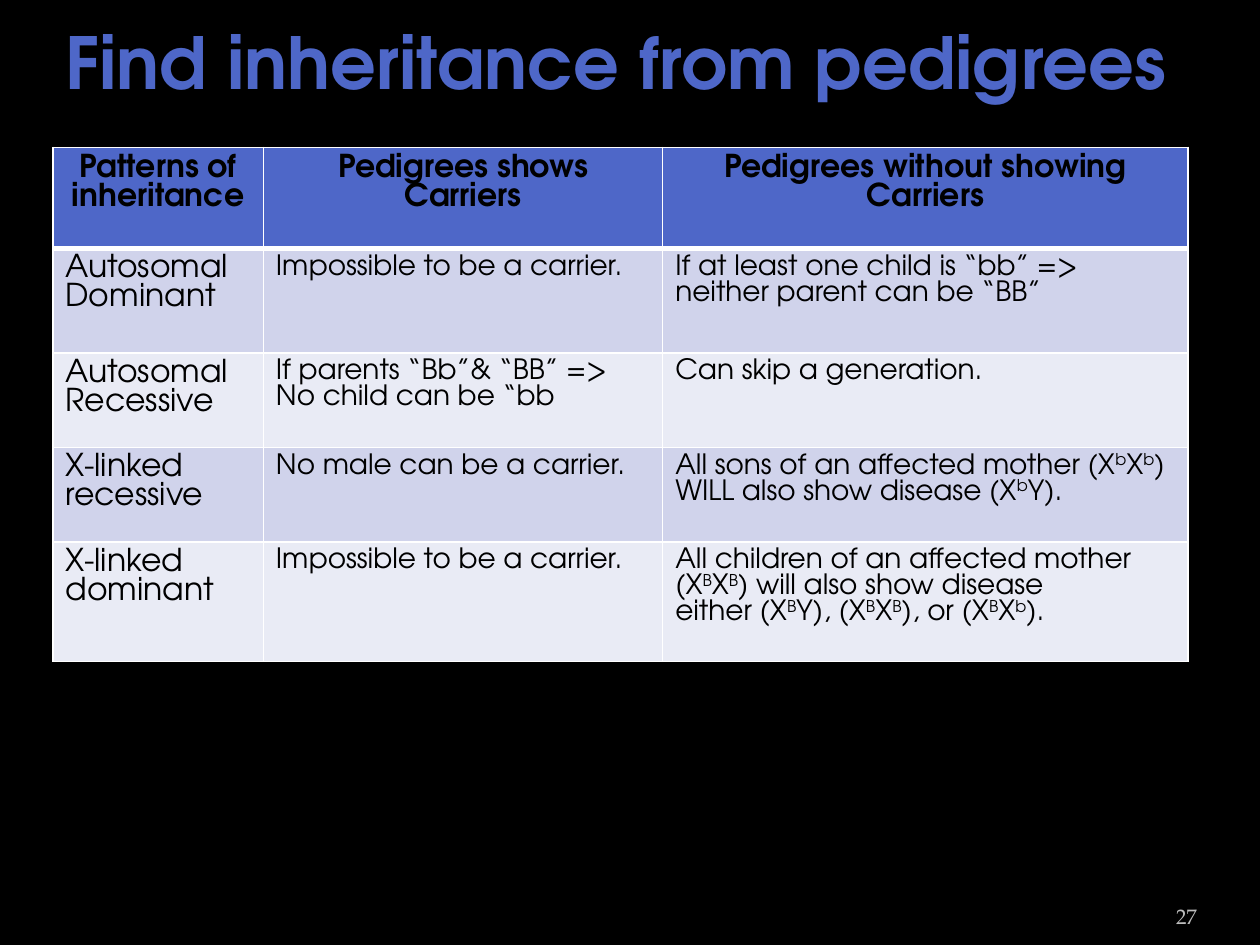
from lxml.etree import SubElement
from pptx import Presentation
from pptx.dml.color import RGBColor
from pptx.enum.text import MSO_ANCHOR, PP_ALIGN
from pptx.oxml.ns import qn
from pptx.util import Inches, Pt

SANS = "TeX Gyre Adventor"
SERIF = "TeX Gyre Pagella"
BLUE = "4E67C8"
BLACK = "000000"
BANDS = ("D0D3EB", "E9EBF5")
COLUMN_WIDTHS = (1.67, 3.17, 4.17)
ROW_HEIGHTS = (0.8, 0.83, 0.75, 0.75, 0.95)
ROWS = (
    ("Patterns of inheritance", "Pedigrees shows Carriers",
     "Pedigrees without showing Carriers"),
    ("Autosomal Dominant", "Impossible to be a carrier.",
     "If at least one child is “bb” => neither parent can be “BB”"),
    ("Autosomal Recessive", "If parents “Bb”& “BB” => No child can be “bb",
     "Can skip a generation."),
    ("X-linked recessive", "No male can be a carrier.",
     "All sons of an affected mother (X^b^X^b^) WILL also show disease (X^b^Y)."),
    ("X-linked dominant", "Impossible to be a carrier.",
     "All children of an affected mother (X^B^X^B^) will also show disease\n"
     "either (X^B^Y), (X^B^X^B^), or (X^B^X^b^)."),
)


def color(value):
    return RGBColor.from_string(value)


def style_font(font, name, size, value, bold=False):
    font.name = name
    font.size = Pt(size)
    font.color.rgb = color(value)
    font.bold = bold


def add_text(page, area, text, name, size, value, anchor, align, bold=False):
    box = page.shapes.add_textbox(*(Inches(length) for length in area))
    frame = box.text_frame
    frame.word_wrap = True
    frame.vertical_anchor = anchor
    frame.text = text
    paragraph = frame.paragraphs[0]
    paragraph.alignment = align
    style_font(paragraph.runs[0].font, name, size, value, bold)
    return frame


def add_marked_text(paragraph, text, size, bold):
    for line_number, line in enumerate(text.split("\n")):
        if line_number:
            paragraph.add_line_break()
        for index, part in enumerate(line.split("^")):
            span = paragraph.add_run()
            span.text = part
            style_font(span.font, SANS, size, BLACK, bold)
            if index % 2:
                span._r.get_or_add_rPr().set("baseline", "30000")


def set_borders(cell, top, bottom):
    properties = cell._tc.get_or_add_tcPr()
    for side, width in (("L", 1), ("R", 1), ("T", top), ("B", bottom)):
        line = SubElement(properties, qn(f"a:ln{side}"), w=str(Pt(width)))
        fill = SubElement(line, qn("a:solidFill"))
        SubElement(fill, qn("a:srgbClr"), val="FFFFFF")


def fill_cell(cell, text, row, column):
    header = row == 0
    size = 18 if header or column == 0 else 16
    set_borders(cell, 3 if row == 1 else 1, 3 if header else 1)
    cell.fill.solid()
    cell.fill.fore_color.rgb = color(BLUE if header else BANDS[(row - 1) % 2])
    paragraph = cell.text_frame.paragraphs[0]
    paragraph.alignment = PP_ALIGN.CENTER if header else PP_ALIGN.LEFT
    paragraph.line_spacing = Pt(16.7 if size == 18 else 14.9)
    add_marked_text(paragraph, text, size, header)


def add_inheritance_table(page):
    table = page.shapes.add_table(
        len(ROWS), len(COLUMN_WIDTHS), Inches(0.42), Inches(1.17),
        Inches(sum(COLUMN_WIDTHS)), Inches(sum(ROW_HEIGHTS))).table
    for column, width in zip(table.columns, COLUMN_WIDTHS):
        column.width = Inches(width)
    for row, height in zip(table.rows, ROW_HEIGHTS):
        row.height = Inches(height)
    for row, texts in enumerate(ROWS):
        for column, text in enumerate(texts):
            fill_cell(table.cell(row, column), text, row, column)


def main():
    deck = Presentation()
    deck.slide_width = Inches(10)
    deck.slide_height = Inches(7.5)
    page = deck.slides.add_slide(deck.slide_layouts[6])
    page.background.fill.solid()
    page.background.fill.fore_color.rgb = color(BLACK)
    add_text(page, (0.42, 0, 9, 0.97), "Find inheritance from pedigrees",
             SANS, 41, BLUE, MSO_ANCHOR.MIDDLE, PP_ALIGN.LEFT, True)
    add_inheritance_table(page)
    number = add_text(page, (8.67, 7.02, 0.83, 0.4), "27", SERIF, 12,
                      "BDBDBD", MSO_ANCHOR.BOTTOM, PP_ALIGN.RIGHT)
    number.margin_left = number.margin_right = 0
    deck.save("out.pptx")


if __name__ == "__main__":
    main()
